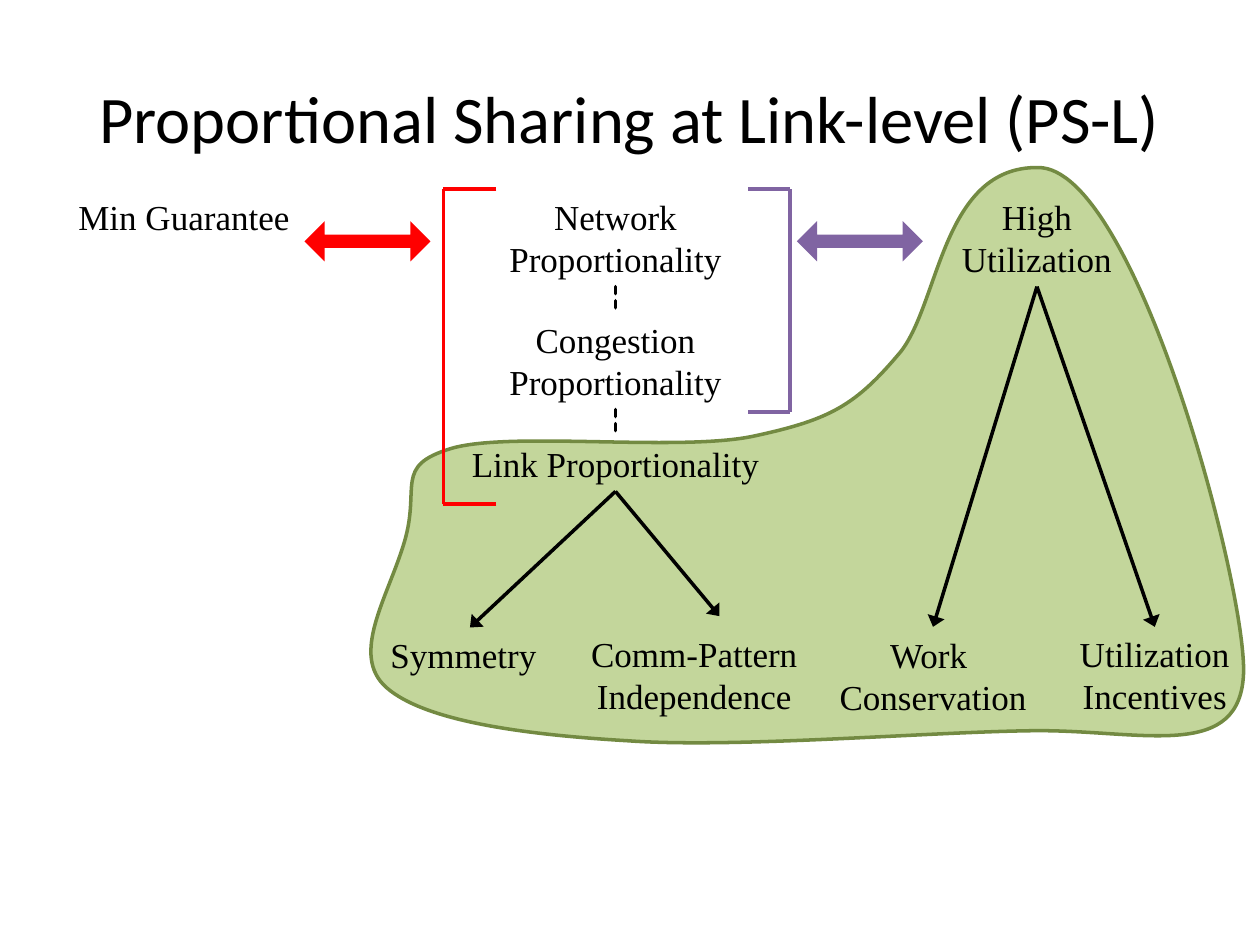
"""Build the slide on proportional sharing at link level."""
from lxml.etree import SubElement
from pptx import Presentation
from pptx.dml.color import RGBColor
from pptx.enum.dml import MSO_LINE
from pptx.enum.shapes import MSO_CONNECTOR, MSO_SHAPE
from pptx.enum.text import MSO_ANCHOR, PP_ALIGN
from pptx.oxml.ns import qn
from pptx.util import Inches, Pt

COLORS = {"text": "000000", "red": "FF0000", "purple": "8064A2",
          "green": "C3D69B", "olive": "738A42"}
COLORS = {name: RGBColor.from_string(h) for name, h in COLORS.items()}

prs = Presentation()
prs.slide_width, prs.slide_height = Inches(10), Inches(7.5)
col, row = prs.slide_width / 100, prs.slide_height / 75
s = prs.slides.add_slide(prs.slide_layouts[6])


def add_text(x, y, w, h, lines, size=20, font="Times New Roman",
             align=PP_ALIGN.CENTER, anchor=MSO_ANCHOR.TOP, wrap=True):
    sp = s.shapes.add_textbox(*map(round, (x * col, y * row, w * col, h * row)))
    tf = sp.text_frame
    tf.word_wrap, tf.vertical_anchor = wrap, anchor
    for i, line in enumerate(lines):
        p = tf.add_paragraph() if i else tf.paragraphs[0]
        p.alignment = align
        r = p.add_run()
        r.text = line
        for key, value in {"size": Pt(size), "name": font}.items():
            setattr(r.font, key, value)
        r.font.color.rgb = COLORS["text"]


def add_line(x1, y1, x2, y2, color="text", arrow=False, dash=None):
    ends = map(round, (x1 * col, y1 * row, x2 * col, y2 * row))
    sp = s.shapes.add_connector(MSO_CONNECTOR.STRAIGHT, *ends)
    sp.line.color.rgb = COLORS[color]
    sp.line.width = Pt(2)
    ln = sp._element.spPr.find(qn("a:ln"))
    if dash:
        sp.line.dash_style = dash
        ln.set("cap", "rnd")
    if arrow:
        SubElement(ln, qn("a:tailEnd"), type="triangle", w="lg", len="med")
    SubElement(sp._element.spPr, qn("a:effectLst"))


start = (35.8, 35.6)
curves = [
    ((31.2, 37), (33.4, 38.6), (32.1, 43)),
    ((30.8, 47.4), (27.7, 52), (30.7, 54.6)),
    ((33.7, 57.2), (41.3, 58.3), (49.9, 58.8)),
    ((58.4, 59.4), (73.5, 58.1), (82, 58)),
    ((90.6, 57.9), (98.6, 60.6), (98.7, 53.2)),
    ((98.7, 45.7), (90, 13.3), (82.4, 13.3)),
    ((74.8, 13.2), (74.6, 23.9), (71.5, 27.9)),
    ((67.9, 32.2), (65.9, 33.3), (59.9, 34.6)),
    ((54, 35.9), (40.5, 34.2), start),
]
left, top, width, height = 29.4, 13.3, 69.2, 45.7
builder = s.shapes.build_freeform(*start, scale=col)
builder.add_line_segments([curve[-1] for curve in curves], close=True)
region = builder.convert_to_shape()
frame = {"left": left * col, "top": top * row,
         "width": width * col, "height": height * row}
for key, value in frame.items():
    setattr(region, key, round(value))
outline = next(region._element.iter(qn("a:path")))
for child in list(outline):
    outline.remove(child)
outline.set("w", str(round(width * 100)))
outline.set("h", str(round(height * 100)))
for tag, points in [("a:moveTo", [start])] + [("a:cubicBezTo", c) for c in curves]:
    segment = SubElement(outline, qn(tag))
    for x, y in points:
        SubElement(segment, qn("a:pt"), x=str(round((x - left) * 100)),
                   y=str(round((y - top) * 100)))
SubElement(outline, qn("a:close"))
region.shadow.inherit = False
region.fill.solid()
region.fill.fore_color.rgb = COLORS["green"]
region.line.color.rgb = COLORS["olive"]
region.line.width = Pt(2)

add_text(5, 3, 90, 12.5, ["Proportional Sharing at Link-level (PS-L)"],
         size=38, font="Calibri", anchor=MSO_ANCHOR.MIDDLE)

for spine, tip, bottom, color in [(35.2, 39.4, 40, "red"),
                                  (62.7, 59.4, 32.7, "purple")]:
    for y in (15, bottom):
        add_line(tip, y, spine, y, color)
    add_line(spine, bottom, spine, 15, color)

for x, color in [(24.17, "red"), (63.25, "purple")]:
    box = map(round, (x * col, 17.55 * row, 10 * col, 3.2 * row))
    sp = s.shapes.add_shape(MSO_SHAPE.LEFT_RIGHT_ARROW, *box)
    sp.adjustments[0], sp.adjustments[1] = 0.33, 0.5
    sp.shadow.inherit = False
    sp.fill.solid()
    sp.fill.fore_color.rgb = COLORS[color]
    sp.line.fill.background()

for x, y, w, h, text in [
    (5, 15, 19.2, 7.7, "Min Guarantee"),
    (35, 15, 27.7, 7.7, "Network Proportionality"),
    (35, 24.8, 27.7, 7.7, "Congestion Proportionality"),
    (35.2, 34.6, 27.3, 4.4, "Link Proportionality"),
    (72.5, 15, 19.6, 7.7, "High Utilization"),
]:
    add_text(x, y, w, h, [text])

add_text(30, 49.8, 14.6, 4.4, ["Symmetry"], align=PP_ALIGN.LEFT, wrap=False)
add_text(45, 49.7, 20.2, 7.7, ["Comm-Pattern", "Independence"], wrap=False)
add_text(64.15, 49.8, 19.8, 7.7, ["Work ", "Conservation"])
add_text(84.35, 49.7, 14.6, 7.7, ["Utilization", "Incentives"], wrap=False)

for x, y, targets in [(48.85, 39, [(37.3, 49.8), (57.1, 48.9)]),
                      (82.3, 22.75, [(74.05, 49.75), (91.65, 49.75)])]:
    for target in targets:
        add_line(x, y, *target, arrow=True)

for y1, y2 in [(22.75, 24.75), (32.5, 34.6)]:
    add_line(48.85, y1, 48.85, y2, dash=MSO_LINE.SQUARE_DOT)

prs.save("out.pptx")
